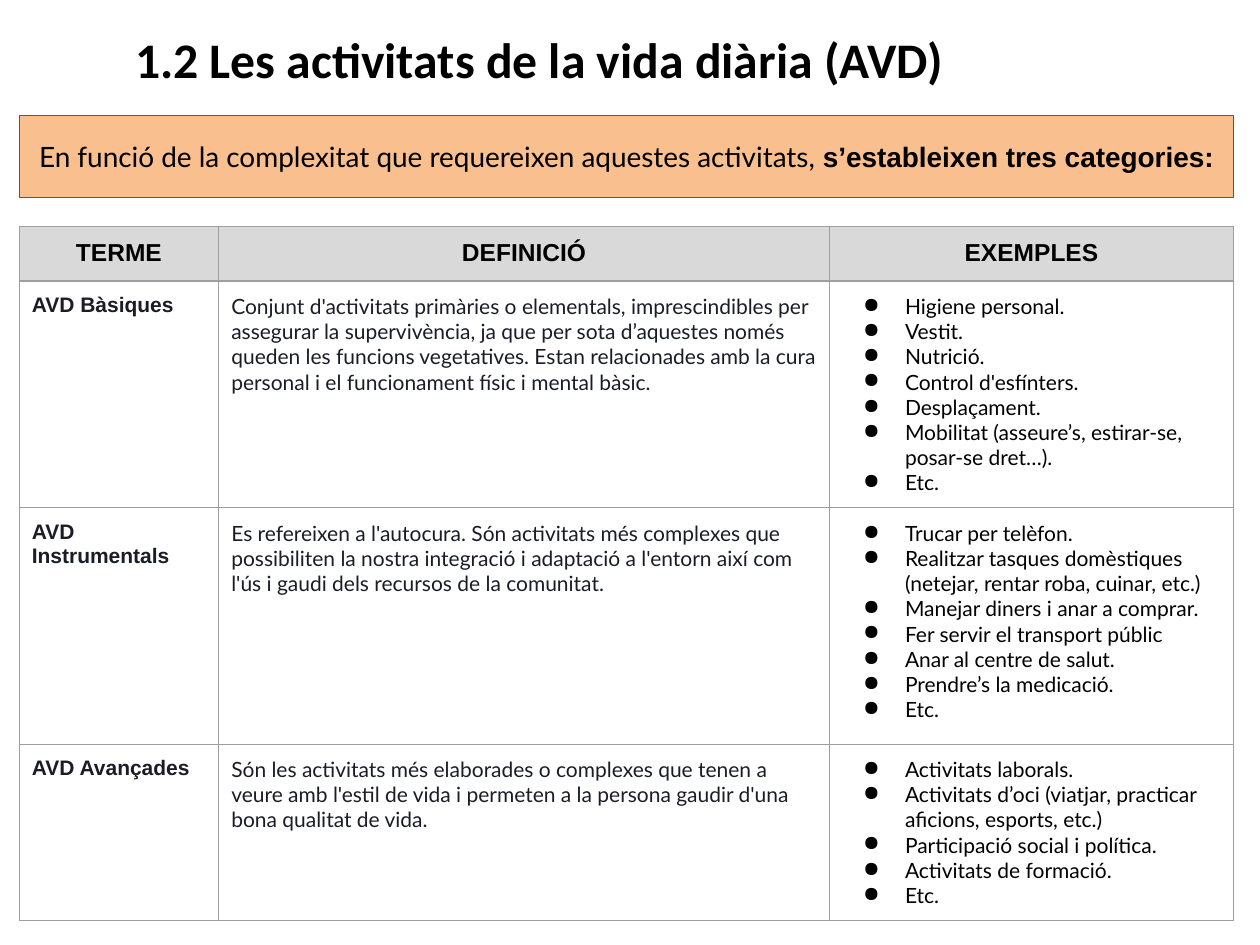
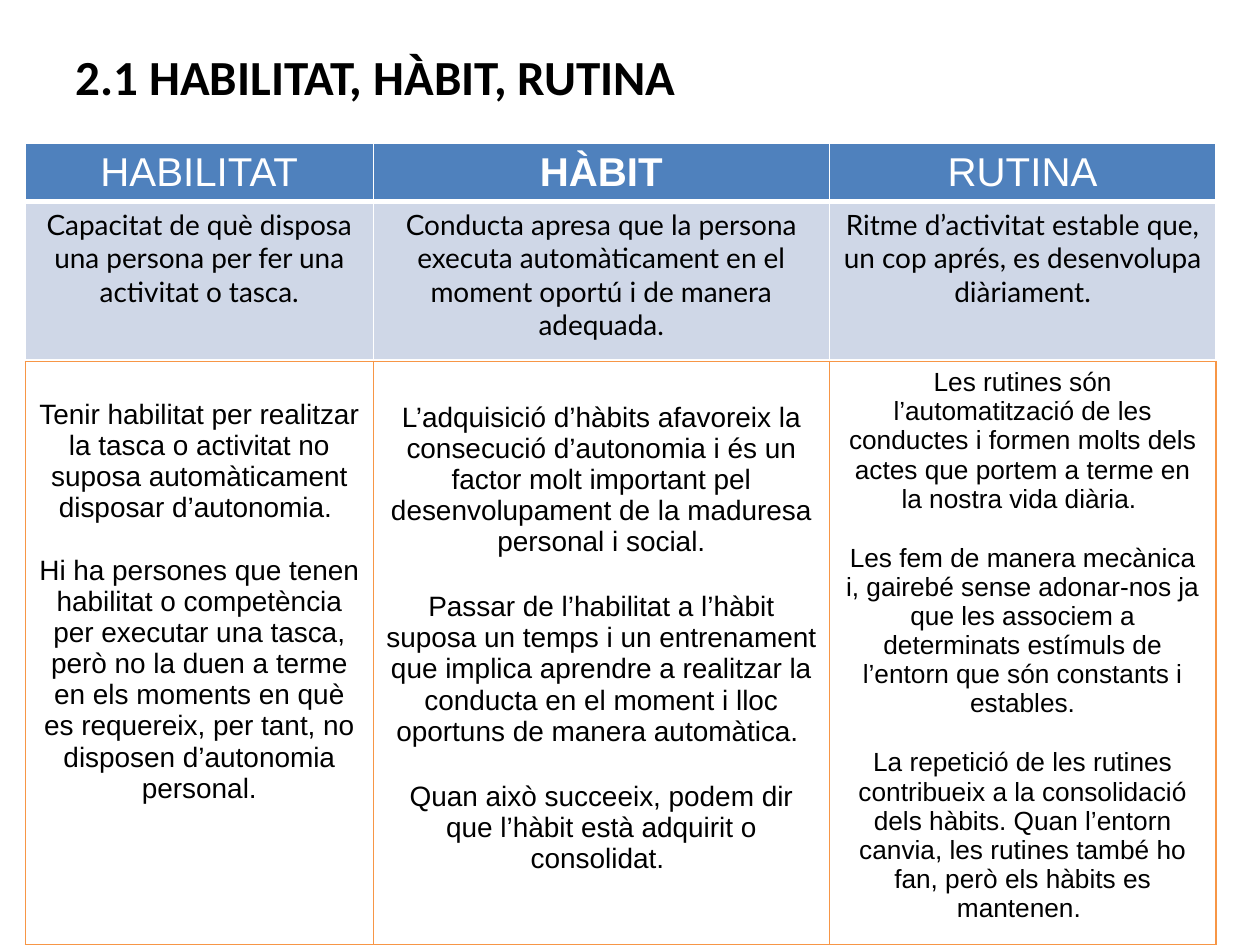
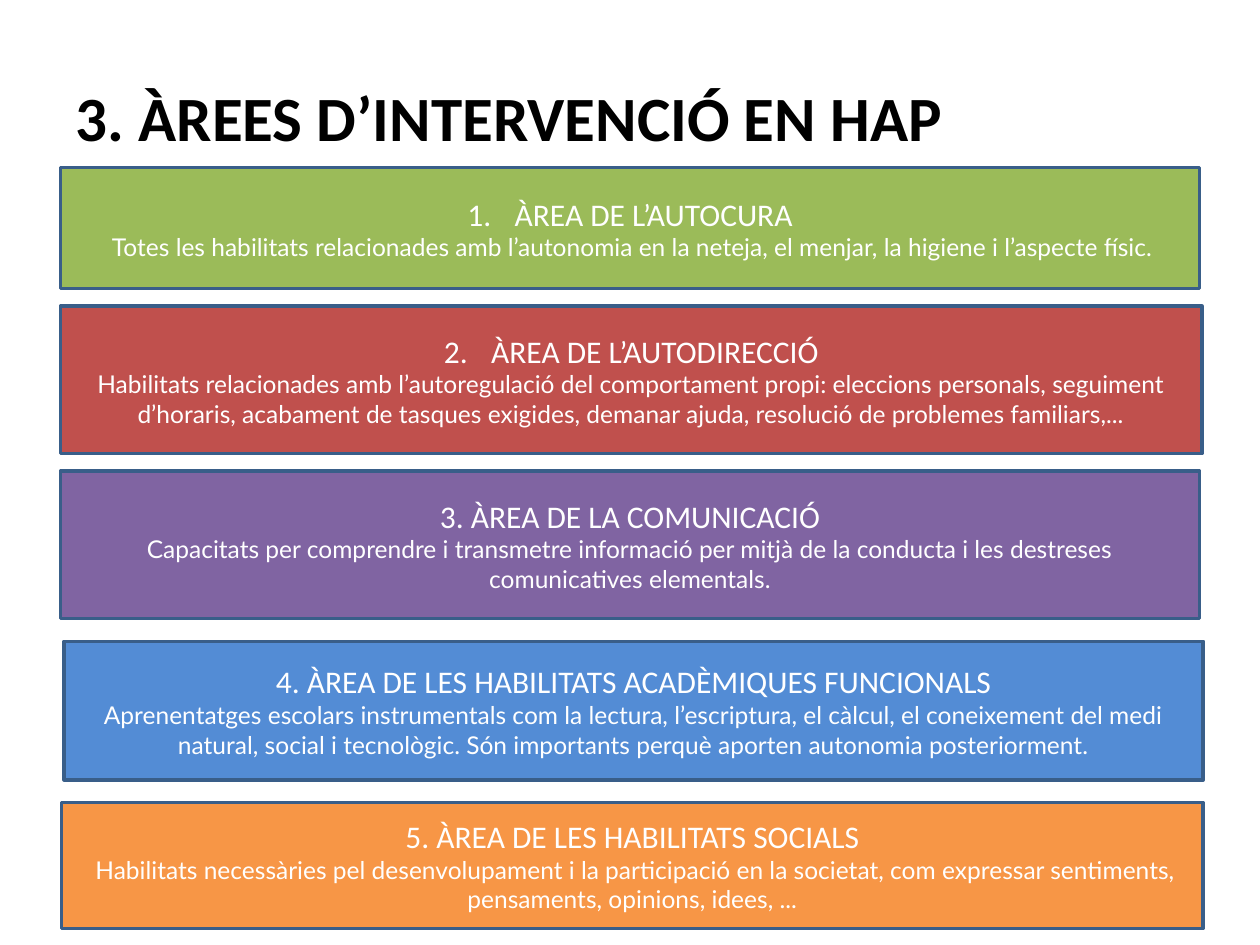
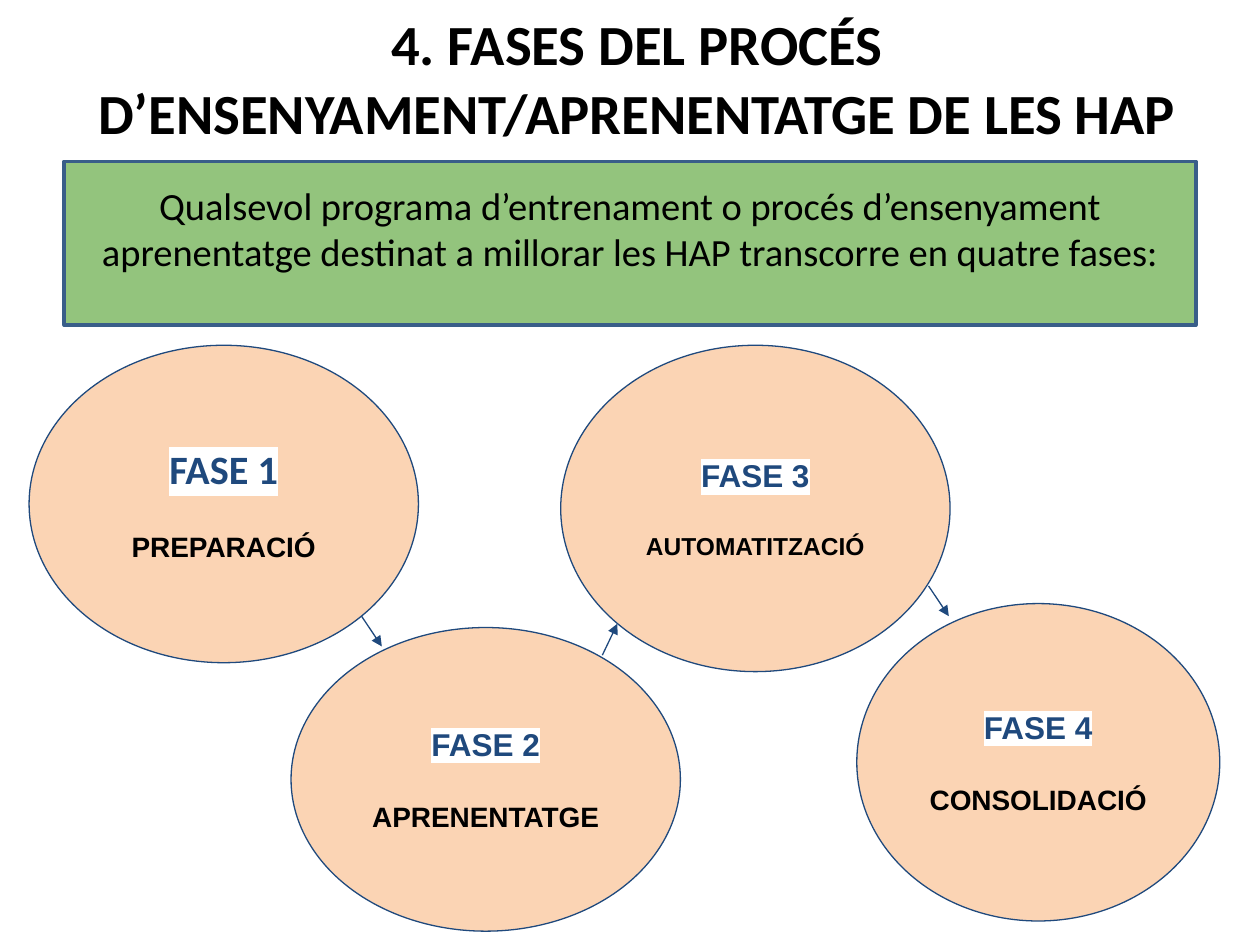
"""Build four slides on daily-living activities and personal autonomy skills."""
from dataclasses import dataclass, replace
from typing import Any, NamedTuple, Optional

import pptx
import pptx.dml.color
import pptx.enum.shapes
import pptx.enum.text
import pptx.oxml.ns
import pptx.util
from lxml import etree

Pt = pptx.util.Pt
ALIGN = pptx.enum.text.PP_ALIGN
ANCHOR = pptx.enum.text.MSO_ANCHOR
SHAPE = pptx.enum.shapes.MSO_SHAPE
qn = pptx.oxml.ns.qn


@dataclass(frozen=True)
class Theme:
    """Colours, fonts and type sizes of the deck."""
    heading_font: str = "Calibri"
    body_font: str = "Lato"
    strong_font: str = "Arial"
    black: str = "000000"
    white: str = "FFFFFF"
    ink: str = "1A1D28"
    navy: str = "1F497D"
    outline: str = "395E89"
    peach: str = "FABF8E"
    pale_peach: str = "FBD4B4"
    soft_green: str = "93C47D"
    grey: str = "D9D9D9"
    grid: str = "9E9E9E"
    blue: str = "4F81BD"
    pale_blue: str = "CFD7E7"
    green: str = "9BBB59"
    red: str = "C0504D"
    purple: str = "8064A2"
    sky: str = "538CD5"
    orange: str = "F79646"
    thin: float = 0.75
    thick: float = 2
    small: float = 12
    text: float = 14
    reading: float = 16
    label: float = 18
    lead: float = 22
    large: float = 23


THEME = Theme()


class Box(NamedTuple):
    """Position and size in points."""
    left: float
    top: float
    width: float
    height: float

    def lengths(self) -> list[int]:
        """Return the four lengths in EMU."""
        return [Pt(value) for value in self]


class Insets(NamedTuple):
    """Text margins in points."""
    side: float = 7.2
    top: float = 3.6
    bottom: float = 3.6


class Edges(NamedTuple):
    """Colour and widths of the borders of a cell."""
    color: str
    side: float
    top: float
    bottom: float


@dataclass(frozen=True)
class Style:
    """Character format."""
    size: float
    font: str
    color: str = THEME.black
    bold: bool = False


@dataclass(frozen=True)
class Line:
    """One paragraph, with an optional differing tail."""
    text: str
    style: Style
    align: Any = ALIGN.CENTER
    before: float = 0
    tail: str = ""
    tail_style: Optional[Style] = None
    bullet: str = ""
    number: int = 0
    indent: float = 0
    hanging: float = 0
    highlight: str = ""


@dataclass(frozen=True)
class CellLook:
    """Fill, borders and margins of a table cell."""
    edges: Edges
    fill: str = ""
    insets: Insets = Insets()


@dataclass(frozen=True)
class Area:
    """One intervention area."""
    box: Box
    color: str
    name: str
    description: str
    number: int = 0


@dataclass(frozen=True)
class Phase:
    """One phase of the learning process."""
    box: Box
    name: str
    stage: str
    name_size: float = THEME.label
    name_font: str = THEME.strong_font
    stage_size: float = THEME.reading


def rgb(color: str) -> Any:
    """Turn a hex string into a colour."""
    return pptx.dml.color.RGBColor.from_string(color)


def set_font(font: Any, style: Style) -> None:
    """Apply a character format."""
    font.size = Pt(style.size)
    font.name = style.font
    font.bold = style.bold
    font.color.rgb = rgb(style.color)


def set_marker(paragraph: Any, line: Line) -> None:
    """Apply indents and a bullet or number."""
    properties = paragraph._p.get_or_add_pPr()
    properties.set("marL", str(Pt(line.indent)))
    properties.set("indent", str(Pt(-line.hanging)))
    if line.bullet:
        marker = etree.Element(qn("a:buChar"), char=line.bullet)
    elif line.number:
        marker = etree.Element(qn("a:buAutoNum"), type="arabicPeriod", startAt=str(line.number))
    else:
        marker = etree.Element(qn("a:buNone"))
    default_font = properties.find(qn("a:defRPr"))
    if default_font is None:
        properties.append(marker)
    else:
        default_font.addprevious(marker)
    if line.bullet or line.number:
        marker_color = etree.Element(qn("a:buClr"))
        etree.SubElement(marker_color, qn("a:srgbClr"), val=line.style.color)
        marker.addprevious(marker_color)


def set_highlight(run: Any, color: str) -> None:
    """Put a highlight behind a run."""
    highlight = etree.SubElement(run._r.get_or_add_rPr(), qn("a:highlight"))
    etree.SubElement(highlight, qn("a:srgbClr"), val=color)


def write(frame: Any, lines: list[Line]) -> None:
    """Fill a text frame with paragraphs."""
    for index, line in enumerate(lines):
        paragraph = frame.paragraphs[0] if index == 0 else frame.add_paragraph()
        paragraph.alignment = line.align
        paragraph.space_before = Pt(line.before)
        run = paragraph.add_run()
        run.text = line.text
        if line.tail_style:
            set_font(run.font, line.style)
            tail = paragraph.add_run()
            tail.text = line.tail
            set_font(tail.font, line.tail_style)
        else:
            set_font(paragraph.font, line.style)
        set_marker(paragraph, line)
        if line.highlight:
            set_highlight(run, line.highlight)


def set_insets(target: Any, insets: Insets) -> None:
    """Set the margins of a text frame or cell."""
    target.margin_left = target.margin_right = Pt(insets.side)
    target.margin_top = Pt(insets.top)
    target.margin_bottom = Pt(insets.bottom)


def add_titled_slide(deck: Any, box: Box, text: str, size: float,
                     align: Any = ALIGN.LEFT, indent: float = 0) -> Any:
    """Add a title-only slide with its title."""
    slide = deck.slides.add_slide(deck.slide_layouts[5])
    title = slide.shapes.title
    title.left, title.top, title.width, title.height = box.lengths()
    frame = title.text_frame
    frame.auto_size = pptx.enum.text.MSO_AUTO_SIZE.NONE
    frame.word_wrap = True
    frame.vertical_anchor = ANCHOR.MIDDLE
    set_insets(frame, Insets())
    style = Style(size, THEME.heading_font, bold=True)
    write(frame, [Line(text, style, align, indent=indent)])
    return slide


def add_panel(slide: Any, kind: Any, box: Box, fill: str, outline: str, width: float,
              lines: list[Line], insets: Insets = Insets()) -> None:
    """Add a filled shape with centred text."""
    panel = slide.shapes.add_shape(kind, *box.lengths())
    panel.shadow.inherit = False
    panel.fill.solid()
    panel.fill.fore_color.rgb = rgb(fill)
    panel.line.color.rgb = rgb(outline)
    panel.line.width = Pt(width)
    frame = panel.text_frame
    frame.word_wrap = True
    frame.vertical_anchor = ANCHOR.MIDDLE
    set_insets(frame, insets)
    write(frame, lines)


def add_arrow(slide: Any, start: tuple[float, float], end: tuple[float, float]) -> None:
    """Add a thin arrow between two points."""
    arrow = slide.shapes.add_connector(pptx.enum.shapes.MSO_CONNECTOR.STRAIGHT,
                                       *[Pt(value) for value in start + end])
    arrow.line.color.rgb = rgb(THEME.navy)
    arrow.line.width = Pt(THEME.thin)
    etree.SubElement(arrow.line._get_or_add_ln(), qn("a:tailEnd"), type="triangle")
    etree.SubElement(arrow._element.spPr, qn("a:effectLst"))


def set_edges(cell: Any, edges: Edges) -> None:
    """Draw the four borders of a cell."""
    properties = cell._tc.get_or_add_tcPr()
    widths = {"a:lnL": edges.side, "a:lnR": edges.side, "a:lnT": edges.top, "a:lnB": edges.bottom}
    for index, (tag, width) in enumerate(widths.items()):
        border = etree.Element(qn(tag), w=str(Pt(width)))
        fill = etree.SubElement(border, qn("a:solidFill"))
        etree.SubElement(fill, qn("a:srgbClr"), val=edges.color)
        properties.insert(index, border)


def add_grid(slide: Any, left: float, top: float, widths: list[float], heights: list[float],
             rows: list[list[tuple[CellLook, list[Line]]]]) -> None:
    """Add a table from looks and paragraphs."""
    box = Box(left, top, sum(widths), sum(heights))
    grid = slide.shapes.add_table(len(heights), len(widths), *box.lengths()).table
    grid.first_row = grid.horz_banding = False
    for column, width in zip(grid.columns, widths):
        column.width = Pt(width)
    for row, height, contents in zip(grid.rows, heights, rows):
        row.height = Pt(height)
        for cell, (look, lines) in zip(row.cells, contents):
            if look.fill:
                cell.fill.solid()
                cell.fill.fore_color.rgb = rgb(look.fill)
            else:
                cell.fill.background()
            set_edges(cell, look.edges)
            set_insets(cell, look.insets)
            write(cell.text_frame, lines)


ACTIVITIES = [
    ("AVD Bàsiques",
     "Conjunt d'activitats primàries o elementals, imprescindibles per assegurar la "
     "supervivència, ja que per sota d’aquestes només queden les funcions vegetatives. Estan "
     "relacionades amb la cura personal i el funcionament físic i mental bàsic.",
     ["Higiene personal.", "Vestit.", "Nutrició.", "Control d'esfínters.", "Desplaçament.",
      "Mobilitat (asseure’s, estirar-se, posar-se dret…).", "Etc."]),
    ("AVD Instrumentals",
     "Es refereixen a l'autocura. Són activitats més complexes que possibiliten la nostra "
     "integració i adaptació a l'entorn així com l'ús i gaudi dels recursos de la comunitat.",
     ["Trucar per telèfon.",
      "Realitzar tasques domèstiques (netejar, rentar roba, cuinar, etc.)",
      "Manejar diners i anar a comprar.", "Fer servir el transport públic",
      "Anar al centre de salut.", "Prendre’s la medicació.", "Etc."]),
    ("AVD Avançades",
     "Són les activitats més elaborades o complexes que tenen a veure amb l'estil de vida i "
     "permeten a la persona gaudir d'una bona qualitat de vida.",
     ["Activitats laborals.", "Activitats d’oci (viatjar, practicar aficions, esports, etc.)",
      "Participació social i política.", "Activitats de formació.", "Etc."]),
]

CONCEPTS = [
    ("HABILITAT", "Capacitat de què disposa una persona per fer una activitat o tasca."),
    ("HÀBIT", "Conducta apresa que la persona executa automàticament en el moment oportú i de "
              "manera adequada."),
    ("RUTINA", "Ritme d’activitat estable que, un cop aprés, es desenvolupa diàriament."),
]

EXPLANATIONS = [
    (16, 18, 18,
     ["Tenir habilitat per realitzar la tasca o activitat no suposa automàticament disposar "
      "d’autonomia. ",
      "Hi ha persones que tenen habilitat o competència per executar una tasca, però no la duen "
      "a terme en els moments en què es requereix, per tant, no disposen d’autonomia personal."]),
    (16, 19.5, 19.5,
     ["L’adquisició d’hàbits afavoreix la consecució d’autonomia i és un factor molt important "
      "pel desenvolupament de la maduresa personal i social.",
      "Passar de l’habilitat a l’hàbit suposa un temps i un entrenament que implica aprendre a "
      "realitzar la conducta en el moment i lloc oportuns de manera automàtica. ",
      "Quan això succeeix, podem dir que l’hàbit està adquirit o consolidat. "]),
    (15, 0, 17,
     ["Les rutines són l’automatització de les conductes i formen molts dels actes que portem a "
      "terme en la nostra vida diària. ",
      "Les fem de manera mecànica i, gairebé sense adonar-nos ja que les associem a determinats "
      "estímuls de l’entorn que són constants i estables.",
      "La repetició de les rutines contribueix a la consolidació dels hàbits. Quan l’entorn "
      "canvia, les rutines també ho fan, però els hàbits es mantenen. "]),
]

AREAS = [
    Area(Box(34.6, 95.8, 650.9, 69.1), THEME.green, "ÀREA DE L’AUTOCURA",
         " Totes les habilitats relacionades amb l’autonomia en la neteja, el menjar, la higiene "
         "i l’aspecte físic.", 1),
    Area(Box(34.6, 175, 652.3, 84.2), THEME.red, "ÀREA DE L’AUTODIRECCIÓ",
         "Habilitats relacionades amb l’autoregulació del comportament propi: eleccions "
         "personals, seguiment d’horaris, acabament de tasques exigides, demanar ajuda, "
         "resolució de problemes familiars,...", 2),
    Area(Box(34.6, 269.3, 650.9, 84.2), THEME.purple, "3. ÀREA DE LA COMUNICACIÓ",
         "Capacitats per comprendre i transmetre informació per mitjà de la conducta i les "
         "destreses comunicatives elementals."),
    Area(Box(36.7, 366.5, 650.9, 79.2), THEME.sky,
         "4. ÀREA DE LES HABILITATS ACADÈMIQUES FUNCIONALS",
         "Aprenentatges escolars instrumentals com la lectura, l’escriptura, el càlcul, el "
         "coneixement del medi natural, social i tecnològic. Són importants perquè aporten "
         "autonomia posteriorment."),
    Area(Box(35.3, 458.6, 652.3, 72), THEME.orange, "5. ÀREA DE LES HABILITATS SOCIALS",
         " Habilitats necessàries pel desenvolupament i la participació en la societat, com "
         "expressar sentiments, pensaments, opinions, idees, ..."),
]

PHASES = [
    Phase(Box(16.6, 197.3, 222.5, 181.4), "FASE 1", "PREPARACIÓ",
          name_size=THEME.large, name_font=THEME.heading_font),
    Phase(Box(166.3, 358.6, 222.5, 173.5), "FASE 2", "APRENENTATGE"),
    Phase(Box(320.4, 197.3, 222.5, 186.5), "FASE 3", "AUTOMATITZACIÓ", stage_size=THEME.text),
    Phase(Box(489.6, 344.9, 207.4, 181.4), "FASE 4", "CONSOLIDACIÓ"),
]

PHASE_STEPS = [
    ((206.6, 352.1), (218.2, 369.4)),
    ((344.2, 374.4), (352.8, 356.4)),
    ((530.6, 334.8), (542.2, 352.1)),
]


def build_activities(deck: Any) -> None:
    """Build the slide on daily-living activities."""
    slide = add_titled_slide(deck, Box(34, 10, 648, 47),
                             "1.2 Les activitats de la vida diària (AVD)", 28.4, indent=36)
    intro = Style(THEME.reading, THEME.body_font)
    add_panel(slide, SHAPE.RECTANGLE, Box(11, 66.2, 694, 46.8), THEME.peach, THEME.outline,
              THEME.thin,
              [Line("En funció de la complexitat que requereixen aquestes activitats, ", intro,
                    before=4.8, tail="s’estableixen tres categories:",
                    tail_style=replace(intro, font=THEME.strong_font, bold=True))])
    look = CellLook(Edges(THEME.grid, *[THEME.thin] * 3), insets=Insets(7.2, 7.2, 7.2))
    heading = Style(THEME.text, THEME.strong_font, bold=True)
    term_style = Style(THEME.small, THEME.strong_font, THEME.ink, True)
    definition_style = Style(THEME.small, THEME.body_font, THEME.ink)
    example_style = Style(THEME.small, THEME.body_font)
    rows = [[(replace(look, fill=THEME.grey), [Line(name, heading)])
             for name in ("TERME", "DEFINICIÓ", "EXEMPLES")]]
    for term, definition, examples in ACTIVITIES:
        rows.append([
            (look, [Line(term, term_style, ALIGN.LEFT)]),
            (look, [Line(definition, definition_style, ALIGN.LEFT)]),
            (look, [Line(example, example_style, ALIGN.LEFT, bullet="●", indent=36, hanging=24)
                    for example in examples]),
        ])
    add_grid(slide, 11, 129.6, [114, 349, 231], [31, 129.5, 135, 101], rows)


def build_concepts(deck: Any) -> None:
    """Build the slide on skill, habit and routine."""
    slide = add_titled_slide(deck, Box(36, 21.6, 648, 44), "2.1 HABILITAT, HÀBIT, RUTINA", 28)
    widths = [199, 260.5, 221]
    header_look = CellLook(Edges(THEME.white, 1, 1, 3), THEME.blue)
    definition_look = CellLook(Edges(THEME.white, 1, 3, 3), THEME.pale_blue)
    header = Style(THEME.large, THEME.strong_font, THEME.white)
    definition_style = Style(THEME.reading, THEME.body_font)
    add_grid(slide, 14.4, 82, widths, [33, 91.6], [
        [(header_look, [Line(name, replace(header, bold=name == "HÀBIT"))])
         for name, _ in CONCEPTS],
        [(definition_look, [Line(definition, definition_style)]) for _, definition in CONCEPTS],
    ])
    explanation_edges = Edges(THEME.orange, *[THEME.thin] * 3)
    explanations = []
    for size, lead, gap, texts in EXPLANATIONS:
        style = Style(size, THEME.strong_font)
        look = CellLook(explanation_edges, insets=Insets(top=3.6 + lead))
        explanations.append((look, [Line(text, style, before=gap if index else 0)
                                    for index, text in enumerate(texts)]))
    add_grid(slide, 14.4, 206.6, widths, [333.4], [explanations])


def build_areas(deck: Any) -> None:
    """Build the slide on intervention areas."""
    slide = add_titled_slide(deck, Box(36, 21.6, 648, 90), "3. ÀREES D’INTERVENCIÓ EN HAP", 36)
    name_style = Style(THEME.label, THEME.heading_font, THEME.white)
    description_style = Style(THEME.text, THEME.body_font, THEME.white)
    for area in AREAS:
        indent = 27 if area.number else 0
        add_panel(slide, SHAPE.RECTANGLE, area.box, area.color, THEME.outline, THEME.thick,
                  [Line(area.name, name_style, number=area.number, indent=indent, hanging=indent),
                   Line(area.description, description_style)])


def build_phases(deck: Any) -> None:
    """Build the slide on the phases of the process."""
    slide = add_titled_slide(deck, Box(36, 10, 656, 68.4),
                             "4. FASES DEL PROCÉS D’ENSENYAMENT/APRENENTATGE DE LES HAP", 32.4,
                             ALIGN.CENTER)
    add_panel(slide, SHAPE.RECTANGLE, Box(36.7, 92.2, 646.6, 93.6), THEME.soft_green,
              THEME.outline, THEME.thick,
              [Line("Qualsevol programa d’entrenament o procés d’ensenyament aprenentatge "
                    "destinat a millorar les HAP transcorre en quatre fases:",
                    Style(THEME.lead, THEME.heading_font))], Insets(bottom=20.6))
    for phase in PHASES:
        add_panel(slide, SHAPE.OVAL, phase.box, THEME.pale_peach, THEME.navy, THEME.thin,
                  [Line(phase.name, Style(phase.name_size, phase.name_font, THEME.navy, True),
                        highlight=THEME.white),
                   Line(phase.stage, Style(phase.stage_size, THEME.strong_font, bold=True),
                        before=21)],
                  Insets(7.2, 7.2, 7.2))
    for start, end in PHASE_STEPS:
        add_arrow(slide, start, end)


def main() -> None:
    """Build and save the deck."""
    deck = pptx.Presentation()
    deck.slide_width, deck.slide_height = Pt(720), Pt(540)
    for build in (build_activities, build_concepts, build_areas, build_phases):
        build(deck)
    deck.save("out.pptx")


if __name__ == "__main__":
    main()
